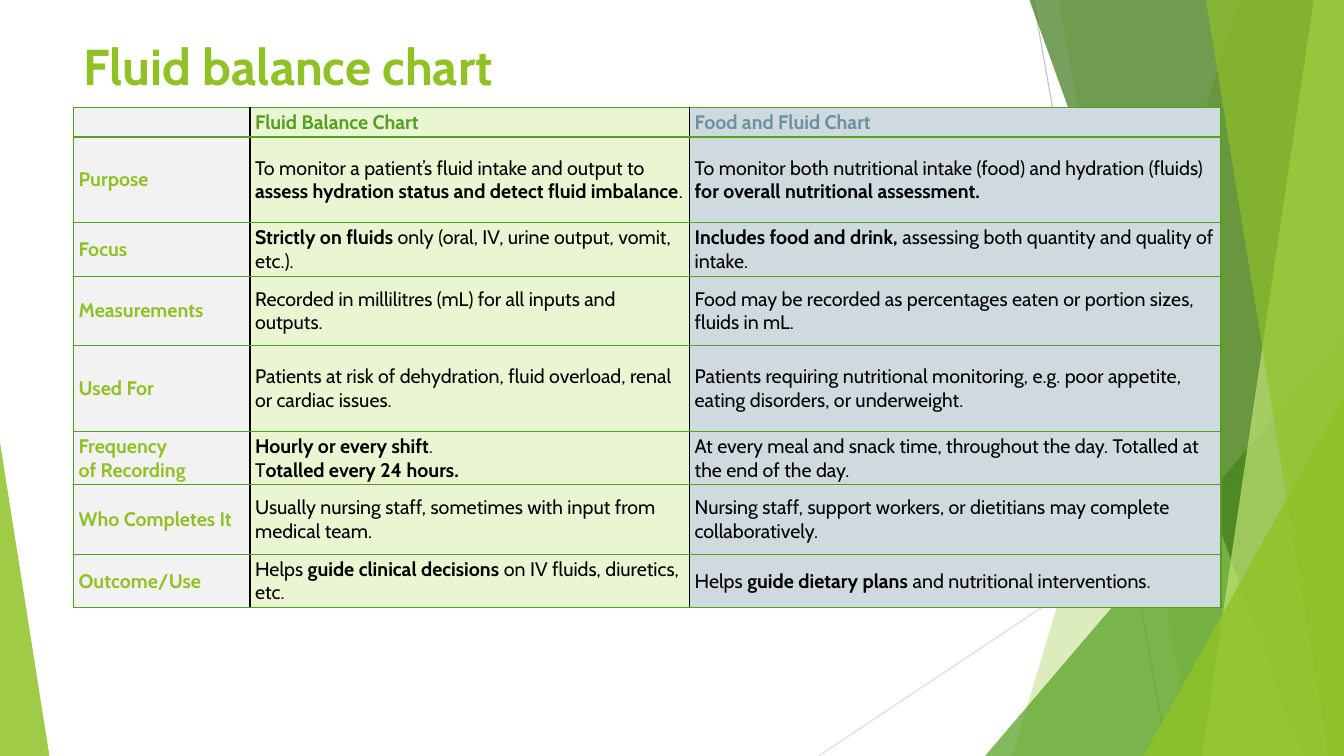
import pptx
import pptx.util
import pptx.dml.color
import pptx.enum.shapes
import pptx.enum.text
import pptx.oxml.ns
from lxml import etree

TITLE = "Fluid balance chart"
FONT = "Cabin"
GREEN, DARK, BLACK = "90C226", "54A021", "000000"

# Double asterisks switch bold on and off; a line break starts a paragraph
ROWS = [
    ("", "**Fluid Balance Chart**", "**Food and Fluid Chart**"),
    ("**Purpose**",
     "To monitor a patient’s fluid intake and output to **assess hydration status and detect fluid imbalance**.",
     "To monitor both nutritional intake (food) and hydration (fluids) **for overall nutritional assessment.**"),
    ("**Focus**",
     "**Strictly on fluids **only (oral, IV, urine output, vomit, etc.).",
     "**Includes food and drink, **assessing both quantity and quality of intake."),
    ("**Measurements**",
     "Recorded in millilitres (mL) for all inputs and outputs.",
     "Food may be recorded as percentages eaten or portion sizes, fluids in mL."),
    ("**Used For**",
     "Patients at risk of dehydration, fluid overload, renal or cardiac issues.",
     "Patients requiring nutritional monitoring, e.g. poor appetite, eating disorders, or underweight."),
    ("**Frequency**\n**of Recording**",
     "**Hourly or every shift**.\nT**otalled every 24 hours.**",
     "At every meal and snack time, throughout the day. Totalled at the end of the day."),
    ("**Who Completes It**",
     "Usually nursing staff, sometimes with input from medical team.",
     "Nursing staff, support workers, or dietitians may complete collaboratively."),
    ("**Outcome/Use**",
     "Helps **guide clinical decisions **on IV fluids, diuretics, etc.",
     "Helps **guide dietary plans** and nutritional interventions."),
]
COL_W = [1.75, 4.36, 5.27]
ROW_H = [0.29, 0.85, 0.53, 0.69, 0.85, 0.53, 0.69, 0.53]
COL_FILL = ["F2F2F2", "EAF6D1", "CFDADF"]
HEAD_COLOR = [GREEN, DARK, "6E91A0"]
BODY_COLOR = [GREEN, BLACK, BLACK]
# Left, right, top and bottom border of the cells in each column
BORDERS = [(DARK, BLACK, DARK, DARK), (BLACK, BLACK, DARK, DARK), (BLACK, DARK, DARK, DARK)]

W, H = 13.33, 7.5
RAYS = [((10.25, 0), (11.58, H), "BFBFBF"), ((W, 4.03), (8.12, H), "D9D9D9")]
# Facets run from a top x and a bottom x to the right edge;
# triangles stand on the bottom edge: left, top, width, apex position
BACKDROP = [
    ("facet", (12.28, 10.04), GREEN, 30),
    ("facet", (10.5, 11.83), GREEN, 20),
    ("triangle", (9.77, 3.33, 3.56, 1), DARK, 72),
    ("facet", (10.21, 12.91), "3F7819", 70),
    ("facet", (13.03, 11.92), "C0E474", 70),
    ("facet", (11.96, 13.18), GREEN, 65),
    ("triangle", (11.34, 3.93, 1.99, 1), GREEN, 80),
    ("triangle", (0, 4.39, 0.49, 0), GREEN, 85),
]

inch, qn = pptx.util.Inches, pptx.oxml.ns.qn


def rgb(color):
    return pptx.dml.color.RGBColor.from_string(color)


def write(tf, text, size, color):
    """Fill a text frame, turning bold on and off at double asterisks."""
    for i, line in enumerate(text.split("\n")):
        p = tf.paragraphs[0] if i == 0 else tf.add_paragraph()
        p.alignment = pptx.enum.text.PP_ALIGN.LEFT
        for j, part in enumerate(line.split("**")):
            if part:
                r = p.add_run()
                r.text = part
                r.font.name, r.font.size = FONT, pptx.util.Pt(size)
                r.font.bold = j % 2 == 1
                r.font.color.rgb = rgb(color)
        if not line:
            etree.SubElement(p._p, qn("a:endParaRPr"), sz=str(size * 100))


def set_border(cell, side, color):
    ln = etree.SubElement(cell._tc.get_or_add_tcPr(), qn("a:ln" + side), w="12700")
    fill = etree.SubElement(ln, qn("a:solidFill"))
    etree.SubElement(fill, qn("a:srgbClr"), val=color)


def add_ray(s, start, end, color):
    line = s.shapes.add_connector(pptx.enum.shapes.MSO_CONNECTOR.STRAIGHT,
                                  *map(inch, start + end))
    line.line.color.rgb = rgb(color)
    line.line.width = pptx.util.Pt(0.75)
    etree.SubElement(line._element.spPr, qn("a:effectLst"))


def add_backdrop(s, kind, place, color, opacity):
    if kind == "facet":
        top, bottom = place
        fb = s.shapes.build_freeform(inch(top), 0, scale=1.0)
        fb.add_line_segments([(inch(x), inch(y)) for x, y in [(W, 0), (W, H), (bottom, H)]])
        sp = fb.convert_to_shape()
    else:
        left, top, width, apex = place
        sp = s.shapes.add_shape(pptx.enum.shapes.MSO_SHAPE.ISOSCELES_TRIANGLE,
                                inch(left), inch(top), inch(width), inch(H - top))
        sp.adjustments[0] = apex
    sp.shadow.inherit = False
    sp.line.fill.background()
    sp.fill.solid()
    sp.fill.fore_color.rgb = rgb(color)
    clr = sp._element.spPr.find(qn("a:solidFill")).find(qn("a:srgbClr"))
    etree.SubElement(clr, qn("a:alpha"), val=str(opacity * 1000))


def add_comparison(s, left, top):
    frame = s.shapes.add_table(len(ROWS), len(COL_W), inch(left), inch(top),
                               inch(sum(COL_W)), inch(sum(ROW_H)))
    table = frame.table
    table.first_row = table.horz_banding = False
    for column, width in zip(table.columns, COL_W):
        column.width = inch(width)
    for r, (row, height) in enumerate(zip(ROWS, ROW_H)):
        table.rows[r].height = inch(height)
        for c, text in enumerate(row):
            cell = table.cell(r, c)
            cell.margin_left = cell.margin_right = inch(0.05)
            cell.margin_top = cell.margin_bottom = inch(0.02)
            cell.vertical_anchor = pptx.enum.text.MSO_ANCHOR.MIDDLE
            for side, color in zip("LRTB", BORDERS[c]):
                set_border(cell, side, color)
            cell.fill.solid()
            cell.fill.fore_color.rgb = rgb(COL_FILL[c])
            write(cell.text_frame, text, 14, (BODY_COLOR if r else HEAD_COLOR)[c])


def main():
    prs = pptx.Presentation()
    prs.slide_width, prs.slide_height = inch(W), inch(H)
    s = prs.slides.add_slide(prs.slide_layouts[5])

    # Green backdrop
    for ray in RAYS:
        add_ray(s, *ray)
    for part in BACKDROP:
        add_backdrop(s, *part)

    # Title and table share the left edge
    left = 0.73
    title = s.shapes.title
    title.left, title.top, title.width, title.height = map(inch, (left, 0.3, 6.67, 0.71))
    title.text_frame.vertical_anchor = pptx.enum.text.MSO_ANCHOR.TOP
    write(title.text_frame, f"**{TITLE}**", 36, GREEN)
    add_comparison(s, left, 1.07)

    prs.save("out.pptx")


if __name__ == "__main__":
    main()
